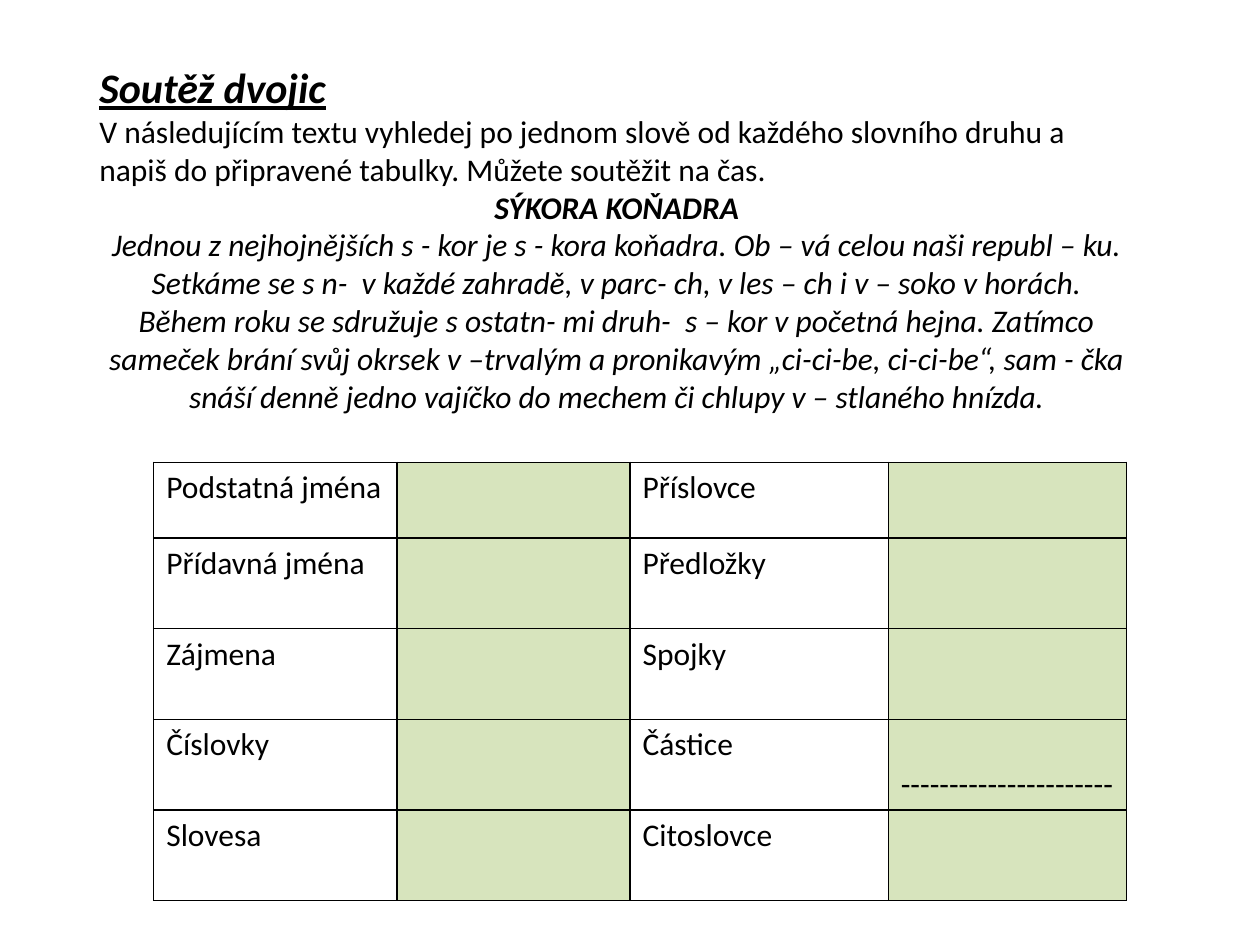
from dataclasses import dataclass

from lxml.etree import SubElement
from pptx import Presentation
from pptx.dml.color import RGBColor
from pptx.enum.text import MSO_ANCHOR, MSO_AUTO_SIZE, PP_ALIGN
from pptx.oxml.ns import qn
from pptx.util import Inches, Pt


@dataclass(frozen=True)
class Theme:
    font: str = "Calibri"
    title_size: int = 24
    body_size: int = 18
    border_width: int = 1
    ink: str = "000000"
    answer_fill: str = "D7E4BD"


THEME = Theme()

TITLE = "Soutěž dvojic"
TASK = (
    "V následujícím textu vyhledej po jednom slově od každého slovního druhu a "
    "napiš do připravené tabulky. Můžete soutěžit na čas."
)
STORY_TITLE = "SÝKORA KOŇADRA"
STORY = [
    "Jednou z nejhojnějších s - kor je s - kora koňadra. Ob – vá celou naši republ – ku.",
    "Setkáme se s n-  v každé zahradě, v parc- ch, v les – ch i v – soko v horách.",
    "Během roku se sdružuje s ostatn- mi druh-  s – kor v početná hejna. Zatímco "
    "sameček brání svůj okrsek v –trvalým a pronikavým „ci-ci-be, ci-ci-be“, "
    "sam - čka snáší denně jedno vajíčko do mechem či chlupy v – stlaného hnízda.",
]
WORD_CLASSES = [
    ("Podstatná jména", "", "Příslovce", ""),
    ("Přídavná jména", "", "Předložky", ""),
    ("Zájmena", "", "Spojky", ""),
    ("Číslovky", "", "Částice", "-" * 22),
    ("Slovesa", "", "Citoslovce", ""),
]
COLUMN_WIDTHS = [1.93, 1.85, 2.05, 1.89]
ROW_HEIGHTS = [0.6] + [0.72] * 4


def write(para, text, size=THEME.body_size, bold=False, italic=False,
          underline=False, align=PP_ALIGN.LEFT):
    para.alignment = align
    span = para.add_run()
    span.text = text
    font = span.font
    font.name = THEME.font
    font.size = Pt(size)
    font.bold, font.italic, font.underline = bold, italic, underline
    font.color.rgb = RGBColor.from_string(THEME.ink)


def draw_borders(cell):
    properties = cell._tc.get_or_add_tcPr()
    for side in ("a:lnL", "a:lnR", "a:lnT", "a:lnB"):
        line = SubElement(properties, qn(side), w=str(Pt(THEME.border_width)))
        fill = SubElement(line, qn("a:solidFill"))
        SubElement(fill, qn("a:srgbClr"), val=THEME.ink)


def add_assignment(page, left, top, width, height):
    box = page.shapes.add_textbox(Inches(left), Inches(top), Inches(width), Inches(height))
    frame = box.text_frame
    frame.word_wrap = True
    frame.auto_size = MSO_AUTO_SIZE.SHAPE_TO_FIT_TEXT
    write(frame.paragraphs[0], TITLE, size=THEME.title_size,
          bold=True, italic=True, underline=True)
    write(frame.add_paragraph(), TASK)
    write(frame.add_paragraph(), STORY_TITLE, bold=True, italic=True, align=PP_ALIGN.CENTER)
    for text in STORY:
        write(frame.add_paragraph(), text, italic=True, align=PP_ALIGN.CENTER)


def add_answer_table(page, left, top, width, height):
    table = page.shapes.add_table(
        len(ROW_HEIGHTS), len(COLUMN_WIDTHS),
        Inches(left), Inches(top), Inches(width), Inches(height),
    ).table
    table.first_row = table.horz_banding = False
    for column, share in zip(table.columns, COLUMN_WIDTHS):
        column.width = Inches(width * share / sum(COLUMN_WIDTHS))
    for row, share, texts in zip(table.rows, ROW_HEIGHTS, WORD_CLASSES):
        row.height = Inches(height * share / sum(ROW_HEIGHTS))
        for index, (cell, text) in enumerate(zip(row.cells, texts)):
            draw_borders(cell)
            if index % 2:
                cell.fill.solid()
                cell.fill.fore_color.rgb = RGBColor.from_string(THEME.answer_fill)
                cell.vertical_anchor = MSO_ANCHOR.BOTTOM
            else:
                cell.fill.background()
            if text:
                write(cell.text_frame.paragraphs[0], text)


def main():
    deck = Presentation()
    deck.slide_width, deck.slide_height = Inches(10), Inches(7.5)
    page = deck.slides.add_slide(deck.slide_layouts[6])
    add_assignment(page, 0.69, 0.44, 8.41, 3.23)
    add_answer_table(page, 1.22, 3.67, sum(COLUMN_WIDTHS), sum(ROW_HEIGHTS))
    deck.save("out.pptx")


if __name__ == "__main__":
    main()
